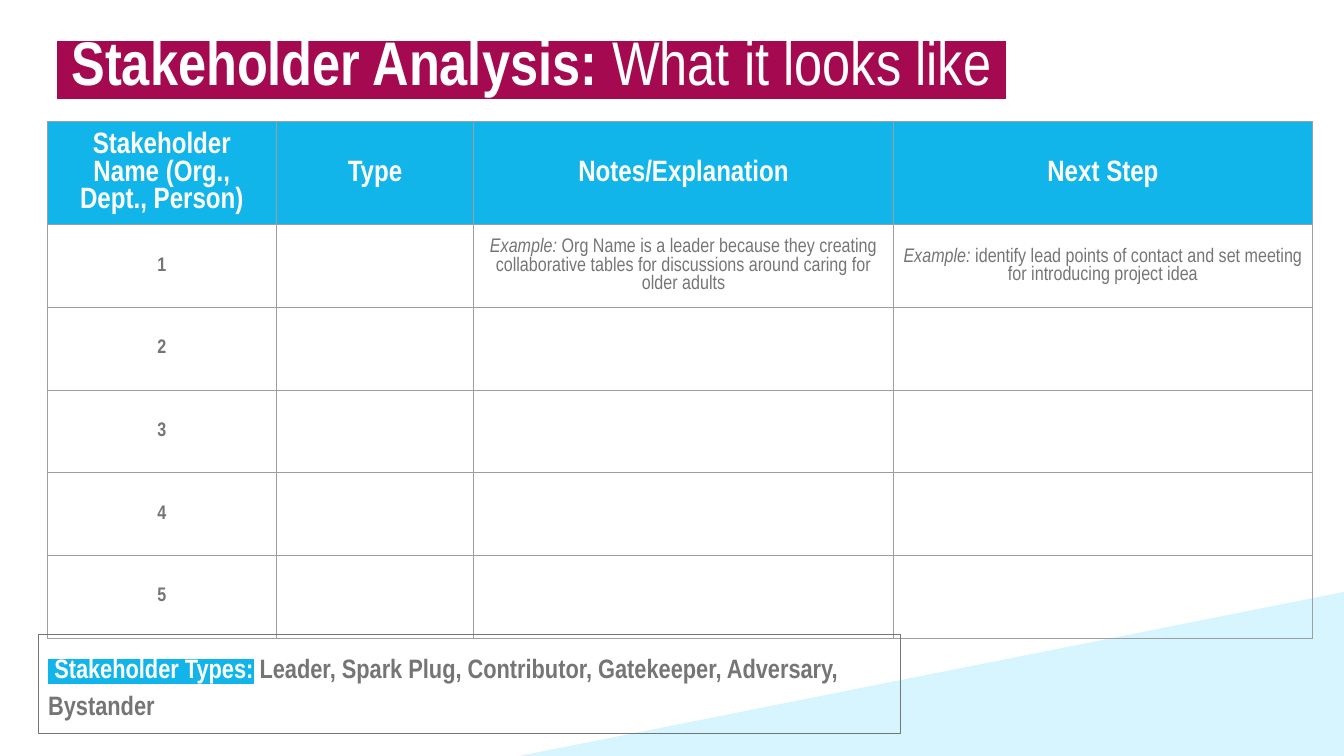
from pptx import Presentation
from pptx.dml.color import RGBColor
from pptx.enum.shapes import MSO_SHAPE
from pptx.enum.text import MSO_ANCHOR, MSO_AUTO_SIZE, PP_ALIGN
from pptx.oxml import parse_xml
from pptx.oxml.ns import nsdecls
from pptx.util import Inches, Pt

FONT = "Arial Narrow"
WHITE, GREY, BORDER = "FFFFFF", "757575", "9E9E9E"
BLUE, PALE_BLUE, MAGENTA = "12B5EA", "D6F5FF", "A50A50"


def rgb(value):
    return RGBColor.from_string(value)


def add_run(p, text, size, color, bold=False, italic=False, highlight=None):
    r = p.add_run()
    r.text = text
    r.font.name, r.font.size = FONT, Pt(size)
    r.font.bold, r.font.italic = bold, italic
    r.font.color.rgb = rgb(color)
    if highlight:
        fill = r.font._element.find("{*}solidFill")
        fill.addnext(parse_xml(
            f'<a:highlight {nsdecls("a")}><a:srgbClr val="{highlight}"/></a:highlight>'))


def add_corner(s, x, y, w, h):
    sp = s.shapes.add_shape(MSO_SHAPE.ISOSCELES_TRIANGLE,
                            Inches(x), Inches(y), Inches(w), Inches(h))
    sp.adjustments[0] = 1
    sp.shadow.inherit = False
    sp.fill.solid()
    sp.fill.fore_color.rgb = rgb(PALE_BLUE)
    sp.line.fill.background()


def add_title(s, x, y, w, h):
    sp = s.shapes.title
    sp.left, sp.top, sp.width, sp.height = Inches(x), Inches(y), Inches(w), Inches(h)
    tf = sp.text_frame
    tf.auto_size = MSO_AUTO_SIZE.NONE
    tf.vertical_anchor = MSO_ANCHOR.MIDDLE
    p = tf.paragraphs[0]
    p.alignment = PP_ALIGN.LEFT
    add_run(p, " Stakeholder Analysis: ", 44, WHITE, bold=True, highlight=MAGENTA)
    add_run(p, "What it looks like", 44, WHITE, highlight=MAGENTA)
    add_run(p, ".", 44, MAGENTA, bold=True, highlight=MAGENTA)


def format_cell(cell, fill=None):
    cell.margin_left = cell.margin_right = Inches(0.1)
    cell.margin_top = cell.margin_bottom = Inches(0.1)
    cell.vertical_anchor = MSO_ANCHOR.MIDDLE
    cell.text_frame.paragraphs[0].alignment = PP_ALIGN.CENTER
    if fill:
        cell.fill.solid()
        cell.fill.fore_color.rgb = rgb(fill)
    else:
        cell.fill.background()
    # Borders come before the fill in the cell properties
    for i, side in enumerate(("lnL", "lnR", "lnT", "lnB")):
        cell._tc.get_or_add_tcPr().insert(i, parse_xml(
            f'<a:{side} {nsdecls("a")} w="9525"><a:solidFill>'
            f'<a:srgbClr val="{BORDER}"/></a:solidFill></a:{side}>'))


def add_stakeholder_table(s, x, y, col_widths, row_heights):
    table = s.shapes.add_table(
        len(row_heights), len(col_widths), Inches(x), Inches(y),
        Inches(sum(col_widths)), Inches(sum(row_heights))).table
    table.first_row = table.horz_banding = False
    for col, width in zip(table.columns, col_widths):
        col.width = Inches(width)
    for i, height in enumerate(row_heights):
        table.rows[i].height = Inches(height)
        for cell in table.rows[i].cells:
            format_cell(cell, BLUE if i == 0 else None)

    def paragraph(row, col):
        return table.cell(row, col).text_frame.paragraphs[0]

    # Header and row numbers
    headers = ("Stakeholder Name (Org., Dept., Person)", "Type",
               "Notes/Explanation", "Next Step")
    for col, text in enumerate(headers):
        add_run(paragraph(0, col), text, 21, WHITE, bold=True)
    for row in range(1, len(row_heights)):
        add_run(paragraph(row, 0), str(row), 14, GREY, bold=True)

    # Examples in the first row
    examples = {
        2: "Org Name is a leader because they creating collaborative tables "
           "for discussions around caring for older adults",
        3: "identify lead points of contact and set meeting for introducing project idea",
    }
    for col, text in examples.items():
        add_run(paragraph(1, col), "Example: ", 14, GREY, italic=True)
        add_run(paragraph(1, col), text, 14, GREY)


def add_types_box(s, x, y, w, h):
    sp = s.shapes.add_shape(MSO_SHAPE.RECTANGLE,
                            Inches(x), Inches(y), Inches(w), Inches(h))
    sp.shadow.inherit = False
    sp.fill.background()
    sp.line.color.rgb = rgb(GREY)
    sp.line.width = Pt(0.75)
    tf = sp.text_frame
    tf.word_wrap = True
    tf.vertical_anchor = MSO_ANCHOR.MIDDLE
    tf.margin_left = tf.margin_right = tf.margin_top = tf.margin_bottom = Inches(0.1)
    p = tf.paragraphs[0]
    p.alignment = PP_ALIGN.LEFT
    p.line_spacing = 1.15
    add_run(p, " Stakeholder Types:", 19, WHITE, bold=True, highlight=BLUE)
    add_run(p, " Leader, Spark Plug, Contributor, Gatekeeper, Adversary, Bystander",
            19, GREY, bold=True)


def main():
    prs = Presentation()
    prs.slide_width, prs.slide_height = Inches(13.33), Inches(7.5)
    s = prs.slides.add_slide(prs.slide_layouts[5])
    add_corner(s, 5.15, 5.87, 8.19, 1.63)
    add_title(s, 0.47, 0.11, 11.5, 0.99)
    add_stakeholder_table(s, 0.47, 1.21, (2.27, 1.96, 4.16, 4.16), [0.9] + [0.82] * 5)
    add_types_box(s, 0.38, 6.29, 8.55, 0.99)
    prs.save("out.pptx")


if __name__ == "__main__":
    main()
